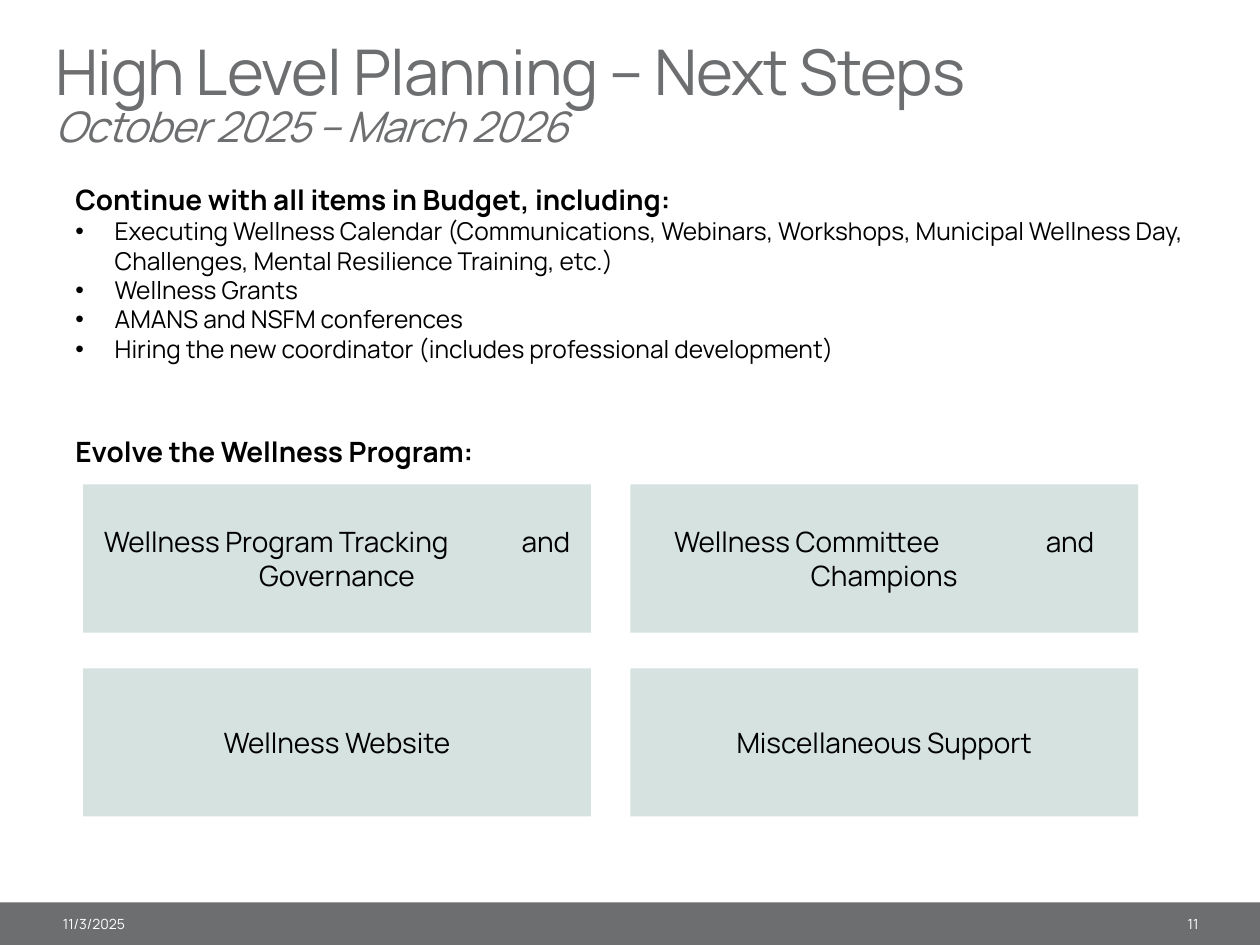
from lxml.etree import SubElement
from pptx import Presentation
from pptx.dml.color import RGBColor
from pptx.enum.shapes import MSO_SHAPE as Shape
from pptx.enum.text import MSO_ANCHOR as Anchor, PP_ALIGN as Align
from pptx.oxml.ns import qn
from pptx.util import Pt

FONT = "Manrope"
GRAY = RGBColor(0x6D, 0x6E, 0x70)
MINT = RGBColor(0xD5, 0xE2, 0xE0)
BLACK = RGBColor(0, 0, 0)
WHITE = RGBColor(0xFF, 0xFF, 0xFF)

BUDGET_ITEMS = [
    "Executing Wellness Calendar (Communications, Webinars, Workshops, "
    "Municipal Wellness Day, Challenges, Mental Resilience Training, etc.)",
    "Wellness Grants",
    "AMANS and NSFM conferences",
    "Hiring the new coordinator (includes professional development)",
]
# Each card: start of its text, extra gap in points, rest of its text
CARDS = [
    ("Wellness Program Tracking", 38.5, "and Governance"),
    ("Wellness Committee", 57.5, "and Champions"),
    ("Wellness Website", 0, ""),
    ("Miscellaneous Support", 0, ""),
]
CARD_LEFT, CARD_TOP = 47.5, 276.8
CARD_WIDTH, CARD_HEIGHT = 290.2, 84.7
COLUMN_STEP, ROW_STEP = 312.7, 105.1


def style_runs(paragraph, size, color, bold=False, italic=False):
    for run in paragraph.runs:
        font = run.font
        font.name, font.size = FONT, Pt(size)
        font.bold, font.italic = bold, italic
        font.color.rgb = color


def set_spacing(run, points):
    """Set the character spacing of a run."""
    run.font._element.set("spc", str(round(points * 100)))


def add_bullet(paragraph, indent=22.5):
    properties = paragraph._p.get_or_add_pPr()
    properties.set("marL", str(Pt(indent)))
    properties.set("indent", str(-Pt(indent)))
    SubElement(properties, qn("a:buFont"), typeface="Arial")
    SubElement(properties, qn("a:buChar"), char="•")


def add_text_box(slide, left, top, width, height, lines, anchor=Anchor.TOP):
    """Add a text box with one paragraph per line and return its paragraphs."""
    box = slide.shapes.add_textbox(Pt(left), Pt(top), Pt(width), Pt(height))
    frame = box.text_frame
    frame.word_wrap = True
    frame.vertical_anchor = anchor
    frame.text = "\n".join(lines)
    return frame.paragraphs


def add_rectangle(slide, left, top, width, height, color):
    rectangle = slide.shapes.add_shape(
        Shape.RECTANGLE, Pt(left), Pt(top), Pt(width), Pt(height))
    rectangle.shadow.inherit = False
    rectangle.fill.solid()
    rectangle.fill.fore_color.rgb = color
    rectangle.line.fill.background()
    return rectangle


def add_footer(slide):
    add_rectangle(slide, 0, 515.7, 720, 24.3, GRAY)
    for left, width, text, alignment in (
            (28.8, 146, "11/3/2025", Align.LEFT), (614, 78, "11", Align.RIGHT)):
        paragraph = add_text_box(
            slide, left, 517, width, 22.3, [text], Anchor.MIDDLE)[0]
        paragraph.alignment = alignment
        style_runs(paragraph, 8, WHITE)


def add_title(slide):
    title, period = add_text_box(
        slide, 24.5, 21.6, 695.5, 59,
        ["High Level Planning – Next Steps", "October 2025 – March 2026"])
    style_runs(title, 36, GRAY)
    style_runs(period, 24, GRAY, italic=True)
    for paragraph in (title, period):
        paragraph.line_spacing = 0.85
        set_spacing(paragraph.runs[0], -0.5)


def add_plan(slide):
    budget, *items, evolve = add_text_box(
        slide, 36, 100.8, 672.5, 401,
        ["Continue with all items in Budget, including:", *BUDGET_ITEMS,
         "Evolve the Wellness Program:"])
    for heading in (budget, evolve):
        style_runs(heading, 16, BLACK, bold=True)
    evolve.space_before = Pt(41)
    for item in items:
        add_bullet(item)
        style_runs(item, 14, BLACK)


def add_card(slide, left, top, start, gap, rest):
    card = add_rectangle(slide, left, top, CARD_WIDTH, CARD_HEIGHT, MINT)
    frame = card.text_frame
    frame.word_wrap = True
    frame.vertical_anchor = Anchor.MIDDLE
    frame.text = start
    paragraph = frame.paragraphs[0]
    paragraph.alignment = Align.CENTER
    if rest:
        space = paragraph.add_run()
        space.text = " "
        set_spacing(space, gap)
        paragraph.add_run().text = rest
    style_runs(paragraph, 16, BLACK)


def main():
    presentation = Presentation()
    presentation.slide_width, presentation.slide_height = Pt(720), Pt(540)
    slide = presentation.slides.add_slide(presentation.slide_layouts[6])
    add_footer(slide)
    add_title(slide)
    add_plan(slide)
    for index, card in enumerate(CARDS):
        row, column = divmod(index, 2)
        add_card(slide, CARD_LEFT + column * COLUMN_STEP,
                 CARD_TOP + row * ROW_STEP, *card)
    presentation.save("out.pptx")


if __name__ == "__main__":
    main()
